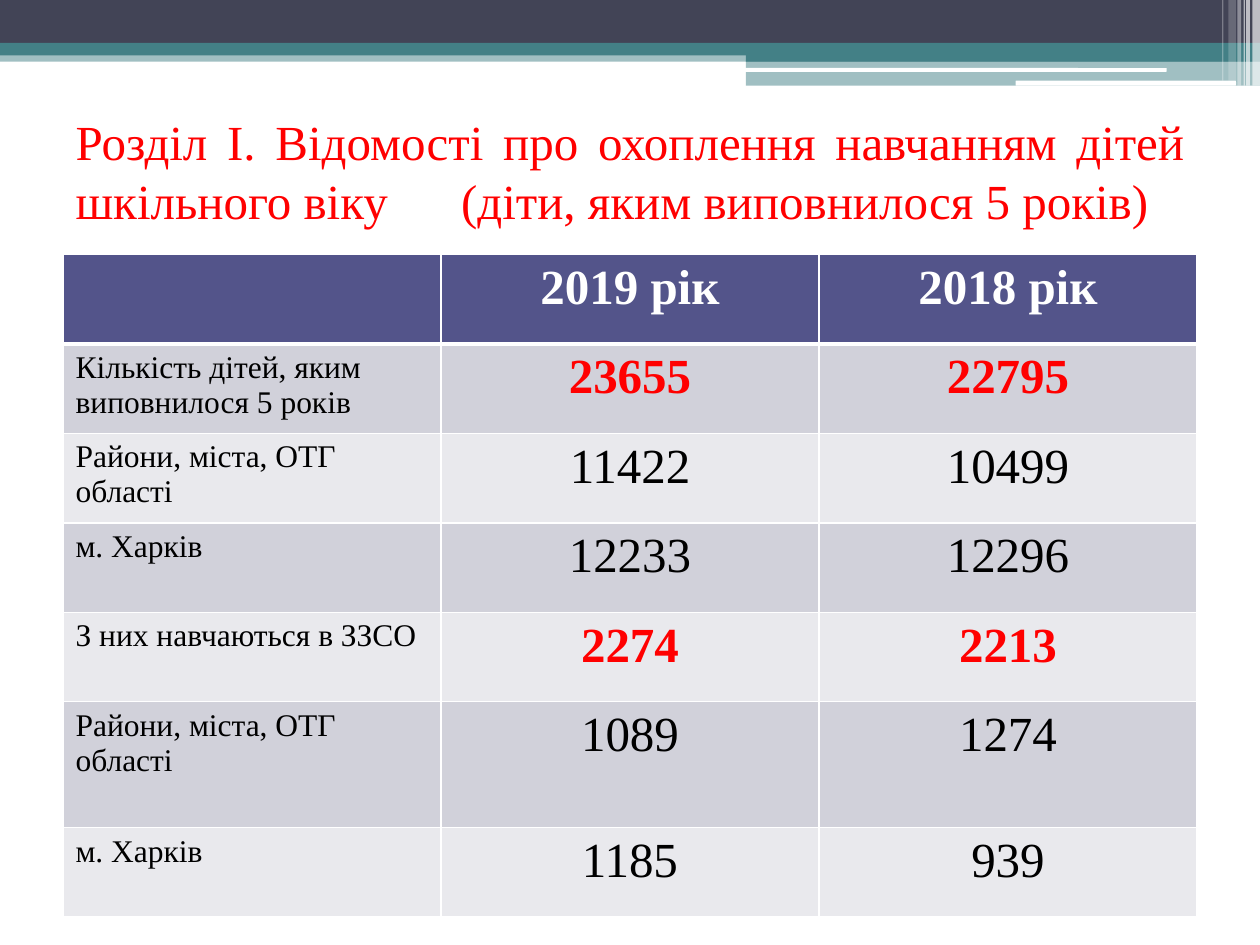
"""Build the slide on school enrolment of five-year-old children."""
from lxml import etree
from pptx import Presentation
from pptx.dml.color import RGBColor
from pptx.enum.shapes import MSO_SHAPE
from pptx.enum.text import MSO_ANCHOR, MSO_AUTO_SIZE, PP_ALIGN
from pptx.oxml.ns import qn
from pptx.util import Inches, Pt

RECT, ROUND = MSO_SHAPE.RECTANGLE, MSO_SHAPE.ROUNDED_RECTANGLE
LEFT, CENTER, JUSTIFY = PP_ALIGN.LEFT, PP_ALIGN.CENTER, PP_ALIGN.JUSTIFY
MIDDLE = MSO_ANCHOR.MIDDLE
NO_FIT = MSO_AUTO_SIZE.NONE

WHITE = RGBColor(0xFF, 0xFF, 0xFF)
BLACK = RGBColor(0x00, 0x00, 0x00)
RED = RGBColor(0xFF, 0x00, 0x00)
SLATE = RGBColor(0x42, 0x44, 0x56)
TEAL = RGBColor(0x43, 0x80, 0x86)
INDIGO = RGBColor(0x53, 0x54, 0x8A)
BAND_DARK = RGBColor(0xD1, 0xD1, 0xDA)
BAND_LIGHT = RGBColor(0xE9, 0xE9, 0xED)

FONT = "Times New Roman"
TITLE = ("Розділ І. Відомості про охоплення навчанням дітей шкільного віку"
         "\t(діти, яким виповнилося 5 років)")
BARS = [
    (0, 0.4, 10, 0.09, TEAL, 50),
    (0, 0, 10, 0.34, SLATE, 100),
    (0, 0.34, 10, 0.1, TEAL, 100),
    (5.92, 0.39, 4.08, 0.1, TEAL, 100),
    (5.92, 0.48, 4.08, 0.2, TEAL, 50),
]
SLITS = [(5.91, 0.54, 3.35, 0.03), (8.06, 0.64, 1.75, 0.04)]
STRIPES = [
    (9.94, 0.06, 0.68, 65),
    (9.89, 0.03, 0.68, 65),
    (9.87, 0.01, 0.68, 60),
    (9.82, 0.03, 0.68, 40),
    (9.75, 0.06, 0.64, 20),
    (9.7, 0.01, 0.64, 30),
]
ROWS = [
    ("", "2019 рік", "2018 рік"),
    ("Кількість дітей, яким виповнилося 5 років", "23655", "22795"),
    ("Райони, міста, ОТГ області", "11422", "10499"),
    ("м. Харків", "12233", "12296"),
    ("З них навчаються в ЗЗСО", "2274", "2213"),
    ("Райони, міста, ОТГ області", "1089", "1274"),
    ("м. Харків", "1185", "939"),
]
HEIGHTS = [0.71, 0.71, 0.71, 0.71, 0.71, 1, 0.71]
TOTAL_ROWS = (1, 4)


def write(tf, text, size=18, color=BLACK, bold=False, align=LEFT):
    p = tf.paragraphs[0]
    p.alignment = align
    r = p.add_run()
    r.text = text
    r.font.name = FONT
    r.font.size = Pt(size)
    r.font.bold = bold
    r.font.color.rgb = color
    return p


class Deck:
    def __init__(self, prs):
        self.slide = prs.slides.add_slide(prs.slide_layouts[5])

    def bar(self, x, y, w, h, color=WHITE, opacity=100, kind=RECT):
        sp = self.slide.shapes.add_shape(
            kind, Inches(x), Inches(y), Inches(w), Inches(h))
        sp.shadow.inherit = False
        sp.line.fill.background()
        sp.fill.solid()
        sp.fill.fore_color.rgb = color
        if opacity < 100:
            clr = sp.fill._xPr.find(".//" + qn("a:srgbClr"))
            etree.SubElement(clr, qn("a:alpha"), val=str(opacity * 1000))

    def title(self, text, x, y, w, h, tab):
        sp = self.slide.shapes.title
        sp.left, sp.top = Inches(x), Inches(y)
        sp.width, sp.height = Inches(w), Inches(h)
        tf = sp.text_frame
        tf.word_wrap = True
        tf.auto_size = NO_FIT
        tf.vertical_anchor = MIDDLE
        p = write(tf, text, size=28, color=RED, align=JUSTIFY)
        tabs = etree.SubElement(p._p.get_or_add_pPr(), qn("a:tabLst"))
        etree.SubElement(tabs, qn("a:tab"), pos=str(Inches(tab)), algn="l")

    def borders(self, cell, top, bottom):
        tcPr = cell._tc.get_or_add_tcPr()
        for side, width in (("L", 1), ("R", 1), ("T", top), ("B", bottom)):
            ln = etree.SubElement(tcPr, qn("a:ln" + side), w=str(Pt(width)))
            fill = etree.SubElement(ln, qn("a:solidFill"))
            etree.SubElement(fill, qn("a:srgbClr"), val=str(WHITE))

    def table(self, rows, heights, x, y, w):
        cols = len(rows[0])
        table = self.slide.shapes.add_table(
            len(rows), cols, Inches(x), Inches(y),
            Inches(w), Inches(sum(heights))).table
        for col in table.columns:
            col.width = Inches(w / cols)
        for i, (values, height) in enumerate(zip(rows, heights)):
            table.rows[i].height = Inches(height)
            band = BAND_DARK if i % 2 else BAND_LIGHT
            for j, value in enumerate(values):
                cell = table.cell(i, j)
                self.borders(cell, 3 if i == 1 else 1, 3 if i == 0 else 1)
                cell.fill.solid()
                cell.fill.fore_color.rgb = band if i else INDIGO
                if not value:
                    continue
                if j == 0:
                    write(cell.text_frame, value)
                    continue
                total = i in TOTAL_ROWS
                color = WHITE if i == 0 else RED if total else BLACK
                write(cell.text_frame, value, size=28, color=color,
                      bold=total or i == 0, align=CENTER)


def main():
    prs = Presentation()
    prs.slide_width, prs.slide_height = Inches(10), Inches(7.5)
    deck = Deck(prs)
    for bar in BARS:
        deck.bar(*bar)
    for slit in SLITS:
        deck.bar(*slit, kind=ROUND)
    for x, w, h, opacity in STRIPES:
        deck.bar(x, 0, w, h, opacity=opacity)
    deck.title(TITLE, 0.5, 0.76, 9, 1.18, tab=3.06)
    deck.table(ROWS, HEIGHTS, 0.5, 2.02, 9)
    prs.save("out.pptx")


if __name__ == "__main__":
    main()
